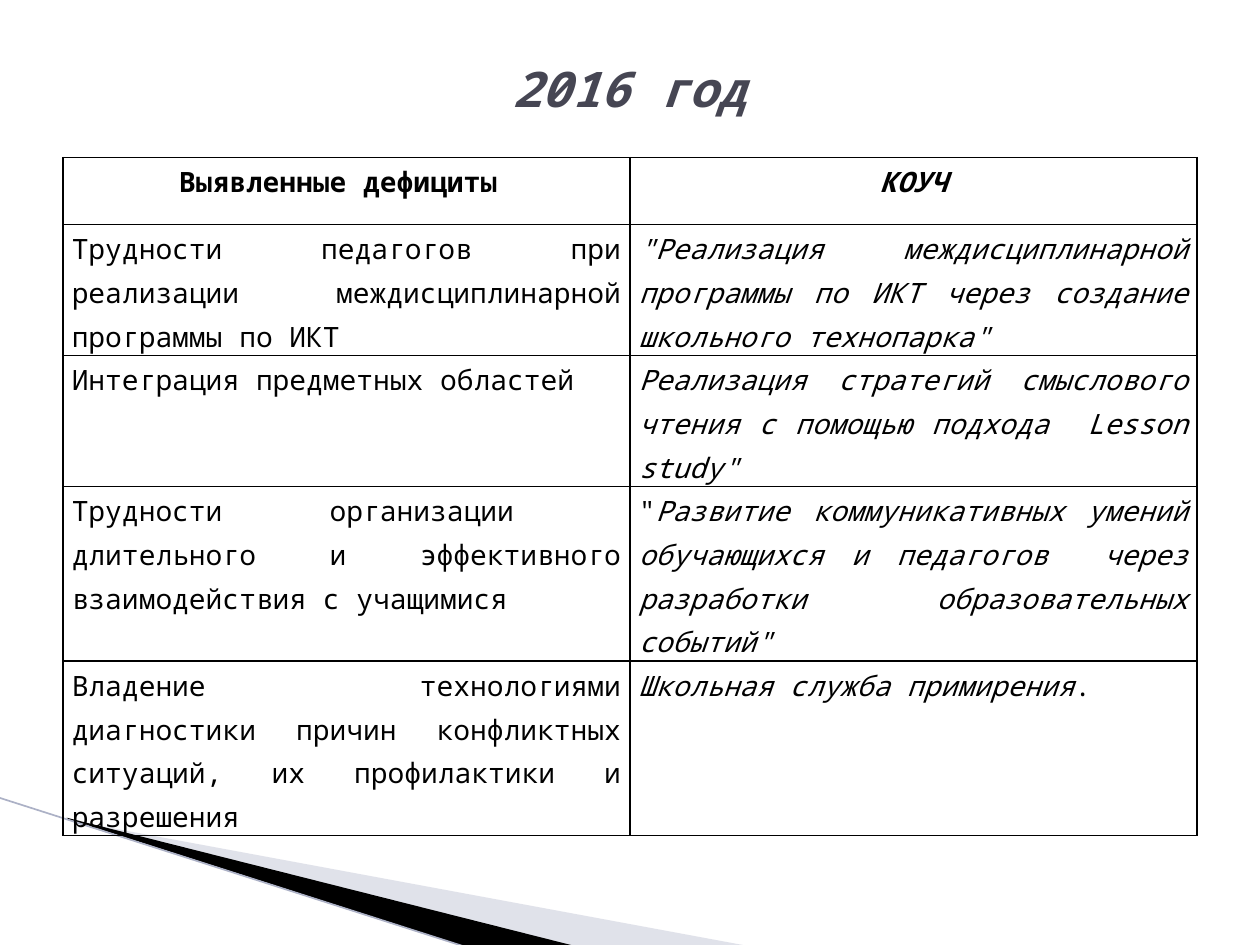
from lxml.etree import SubElement
from pptx import Presentation
from pptx.dml.color import RGBColor
from pptx.enum.shapes import MSO_CONNECTOR
from pptx.enum.text import MSO_ANCHOR, PP_ALIGN
from pptx.oxml.ns import qn
from pptx.util import Inches, Pt

COLORS = {"ink": "000000", "title": "464653", "wedge": "B3B7CB", "edge": "ACB1C6"}
FONT = "Noto Sans Mono"
UNIT = 0.5  # inches in one grid column or row
COLUMNS, ROWS = 20, 15

HEADER = ("Выявленные дефициты ", "КОУЧ")
# Each entry: deficit, then the coach's topic as (text, italic) runs.
TOPICS = [
    ("Трудности педагогов при реализации междисциплинарной программы по ИКТ",
     [("\"Реализация междисциплинарной программы по ИКТ через создание школьного технопарка\"", True)]),
    ("Интеграция предметных областей",
     [("Реализация стратегий смыслового чтения с помощью подхода  Lesson study\"", True)]),
    ("Трудности организации  длительного и эффективного взаимодействия с учащимися",
     [("\"", False),
      ("Развитие коммуникативных умений обучающихся и педагогов  через разработки "
       "образовательных событий\"", True)]),
    ("Владение технологиями диагностики причин конфликтных ситуаций, их профилактики и разрешения",
     [("Школьная служба примирения", True), (".", False)]),
]
ROW_HEIGHTS = [1.06, 1.42, 1.42, 2.12, 2.12]


def grid(*values):
    return [Inches(value * UNIT) for value in values]


def rgb(name):
    return RGBColor.from_string(COLORS[name])


def write(paragraph, text, size=16, color="ink", bold=False, italic=False):
    run = paragraph.add_run()
    run.text = text
    font = run.font
    font.name, font.size, font.bold, font.italic = FONT, Pt(size), bold, italic
    font.color.rgb = rgb(color)


class SlideBuilder:
    def __init__(self, slide):
        self.slide = slide

    def title(self, text, box):
        shape = self.slide.shapes.title
        shape.left, shape.top, shape.width, shape.height = grid(*box)
        shape.text_frame.vertical_anchor = MSO_ANCHOR.MIDDLE
        paragraph = shape.text_frame.paragraphs[0]
        paragraph.alignment = PP_ALIGN.CENTER
        write(paragraph, text, size=28, color="title", bold=True, italic=True)

    def wedge(self, points, color, opacity=100):
        start, *rest = [grid(*point) for point in points]
        builder = self.slide.shapes.build_freeform(*start)
        builder.add_line_segments(rest)
        shape = builder.convert_to_shape()
        shape.shadow.inherit = False
        shape.line.fill.background()
        shape.fill.solid()
        shape.fill.fore_color.rgb = rgb(color)
        if opacity < 100:
            color_element = shape._element.spPr.find(".//" + qn("a:srgbClr"))
            SubElement(color_element, qn("a:alpha"), val=str(opacity * 1000))

    def line(self, start, end, color, width):
        connector = self.slide.shapes.add_connector(
            MSO_CONNECTOR.STRAIGHT, *grid(*start, *end))
        connector.line.color.rgb = rgb(color)
        connector.line.width = Pt(width)
        SubElement(connector._element.spPr, qn("a:effectLst"))

    def table(self, box, row_heights, column_count):
        frame = self.slide.shapes.add_table(len(row_heights), column_count, *grid(*box))
        table = frame.table
        table.first_row = table.horz_banding = False
        for row, height in zip(table.rows, grid(*row_heights)):
            row.height = height
        return table

    def cell(self, cell, runs, alignment, bold=False):
        cell.margin_left = cell.margin_right = Inches(0.07)
        cell.margin_top = cell.margin_bottom = 0
        self.borders(cell)
        cell.fill.background()
        paragraph = cell.text_frame.paragraphs[0]
        paragraph.alignment = alignment
        paragraph.line_spacing = 1.15
        for text, italic in runs:
            write(paragraph, text, bold=bold, italic=italic)

    def borders(self, cell):
        properties = cell._tc.get_or_add_tcPr()
        for side in ("lnL", "lnR", "lnT", "lnB"):
            border = SubElement(properties, qn("a:" + side), w=str(Pt(1)))
            fill = SubElement(border, qn("a:solidFill"))
            SubElement(fill, qn("a:srgbClr"), val=COLORS["ink"])


def main():
    presentation = Presentation()
    presentation.slide_width, presentation.slide_height = grid(COLUMNS, ROWS)
    builder = SlideBuilder(presentation.slides.add_slide(presentation.slide_layouts[5]))

    builder.wedge([(1.1, 13.02), (11.9, 15.02), (9.12, 15.02), (1.1, 13)], "wedge", opacity=40)
    builder.wedge([(1.06, 12.98), (9.14, 15.02), (7.44, 15.04), (1.08, 13)], "ink")
    builder.line((-0.02, 12.66), (7.42, 15.04), "edge", 0.95)

    table = builder.table((1, 2.5, 18, sum(ROW_HEIGHTS)), ROW_HEIGHTS, len(HEADER))
    for column, text in enumerate(HEADER):
        builder.cell(table.cell(0, column), [(text, column == 1)], PP_ALIGN.CENTER, bold=True)
    for row, (deficit, topic) in enumerate(TOPICS, start=1):
        for column, runs in enumerate(([(deficit, False)], topic)):
            builder.cell(table.cell(row, column), runs, PP_ALIGN.JUSTIFY)

    builder.title("2016 год", (1, 0.6, 18, 1.58))
    presentation.save("out.pptx")


if __name__ == "__main__":
    main()
